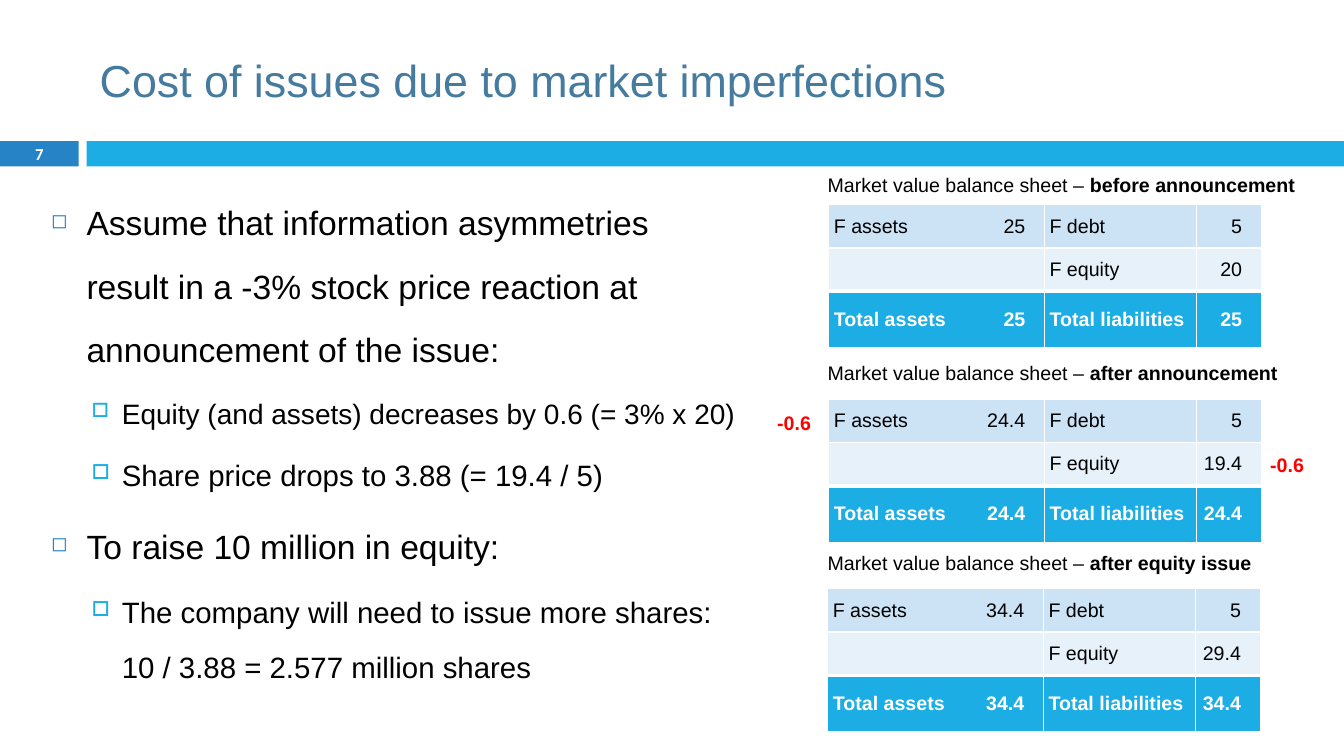
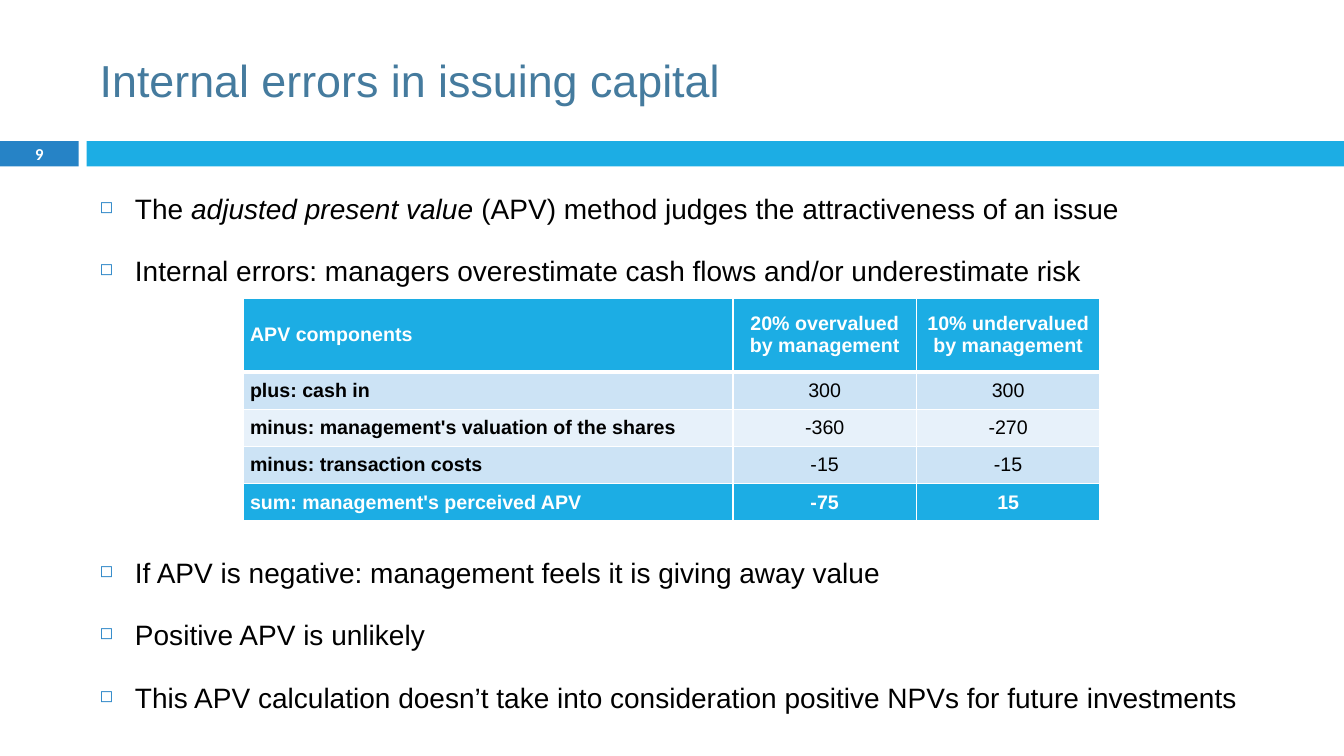
"""Two slides on the cost of issuing capital, with balance sheets and an APV table."""
import pptx
import pptx.dml.color
import pptx.enum.shapes
import pptx.enum.text
import pptx.oxml
import pptx.oxml.ns
import pptx.util

RGB = pptx.dml.color.RGBColor
ALIGN = pptx.enum.text.PP_ALIGN
MIDDLE = pptx.enum.text.MSO_ANCHOR.MIDDLE
TOP = pptx.enum.text.MSO_ANCHOR.TOP
Inches, Pt = pptx.util.Inches, pptx.util.Pt

DEEP_BLUE = RGB(0x26, 0x83, 0xC6)
SKY_BLUE = RGB(0x1C, 0xAD, 0xE4)
TITLE_BLUE = RGB(0x45, 0x7B, 0x9E)
PALE_BLUE = RGB(0xCC, 0xE3, 0xF5)
PALER_BLUE = RGB(0xE7, 0xF1, 0xFA)
BLACK = RGB(0, 0, 0)
WHITE = RGB(0xFF, 0xFF, 0xFF)
RED = RGB(0xFF, 0, 0)

WIDTH, HEIGHT = 13.33, 7.5
BAND_TOP, BAND_HEIGHT = 1.4, 0.25
LINE_SPACING = 1.57
NO_TABLE_STYLE = "{2D5ABB26-0587-4C30-8999-92F81FD0307C}"

LEVELS = [
    dict(indent=0.35, hang=0.35, before=7, bullet="◻", color=DEEP_BLUE, share=60),
    dict(indent=0.7, hang=0.3, before=5.5, bullet="□", color=SKY_BLUE, share=70),
]

ISSUE_COST_POINTS = [
    (0, 24, [("Assume that information asymmetries result in a -3% stock price "
              "reaction at announcement of the issue:", {})]),
    (1, 20, [("Equity (and assets) decreases by 0.6 (= 3% x 20)", {})]),
    (1, 21, [("Share price drops to 3.88 (= 19.4 / 5)", {})]),
    (0, 24, [("To raise 10 million in equity:", {})]),
    (1, 21, [("The company will need to issue more shares: "
              "10 / 3.88 = 2.577 million shares", {})]),
]
BALANCE_SHEETS = [
    ("before announcement", 1.67, 8.22, 2.03, "25", "20"),
    ("after announcement", 3.53, 8.22, 3.96, "24.4", "19.4"),
    ("after equity issue", 5.42, 8.21, 5.84, "34.4", "29.4"),
]
DEBT = "5"
SHEET_COLUMNS = [1.5, 0.5, 0.12, 1.51, 0.5, 0.12]
SHEET_ROWS = [0.43, 0.43, 0.56]
SHEET_FILLS = [PALE_BLUE, PALER_BLUE, SKY_BLUE]
CHANGES = [("-0.6", 7.61, 4.01), ("-0.6", 12.5, 4.42)]

APV_POINTS = [
    (0, 20, [("The ", {}), ("adjusted present value ", {"italic": True}),
             ("(APV) method judges the attractiveness of an issue", {})]),
    (0, 20, [("Internal errors: managers overestimate cash flows "
              "and/or underestimate risk", {})]),
]
APV_CONCLUSIONS = [
    (0, 20, [("If APV is negative: management feels it is giving away value", {})]),
    (0, 20, [("Positive APV is unlikely", {})]),
    (0, 20, [("This APV calculation doesn’t take into consideration positive "
              "NPVs for future investments", {})]),
]
APV_ROWS = [
    ("APV components", "20% overvalued by management", "10% undervalued by management"),
    ("plus: cash in", "300", "300"),
    ("minus: management's valuation of the shares", "-360", "-270"),
    ("minus: transaction costs", "-15", "-15"),
    ("sum: management's perceived APV", "-75", "15"),
]
APV_FILLS = [SKY_BLUE, PALE_BLUE, PALER_BLUE, PALE_BLUE, SKY_BLUE]
APV_COLUMNS = [4.86, 1.82, 1.82]
APV_HEIGHTS = [0.73] + [0.37] * 4


def add_run(paragraph, text, size, color=BLACK, face="Arial", bold=False, italic=False):
    run = paragraph.add_run()
    run.text = text
    font = run.font
    font.size, font.name, font.bold, font.italic = Pt(size), face, bold, italic
    font.color.rgb = color


def add_text_area(slide, left, top, width, height, anchor=TOP):
    frame = slide.shapes.add_textbox(*map(Inches, (left, top, width, height))).text_frame
    frame.word_wrap = True
    frame.vertical_anchor = anchor
    return frame


def add_band(slide, left, width, color):
    band = slide.shapes.add_shape(pptx.enum.shapes.MSO_SHAPE.RECTANGLE,
                                  *map(Inches, (left, BAND_TOP, width, BAND_HEIGHT)))
    band.shadow.inherit = False
    band.fill.solid()
    band.fill.fore_color.rgb = color
    band.line.fill.background()
    return band.text_frame


def add_page(deck, title, number):
    slide = deck.slides.add_slide(deck.slide_layouts[6])
    number_frame = add_band(slide, 0, 0.78, DEEP_BLUE)
    number_frame.margin_top = number_frame.margin_bottom = 0
    number_frame.vertical_anchor = MIDDLE
    number_frame.paragraphs[0].alignment = ALIGN.CENTER
    add_run(number_frame.paragraphs[0], number, 11.9, WHITE, "Calibri", bold=True)
    add_band(slide, 0.86, WIDTH - 0.86, SKY_BLUE)
    heading = add_text_area(slide, 0.89, 0.25, 11.89, 1.08, MIDDLE)
    add_run(heading.paragraphs[0], title, 32, TITLE_BLUE)
    return slide


def set_bullet(paragraph, level):
    props = paragraph._p.get_or_add_pPr()
    props.set("marL", str(Inches(level["indent"])))
    props.set("indent", str(-Inches(level["hang"])))
    ns = pptx.oxml.ns.nsdecls("a")
    for xml in (f'<a:buClr {ns}><a:srgbClr val="{level["color"]}"/></a:buClr>',
                f'<a:buSzPct {ns} val="{level["share"] * 1000}"/>',
                f'<a:buChar {ns} char="{level["bullet"]}"/>'):
        props.append(pptx.oxml.parse_xml(xml))


def add_points(slide, points, *box):
    frame = add_text_area(slide, *box)
    for index, (depth, size, runs) in enumerate(points):
        paragraph = frame.add_paragraph() if index else frame.paragraphs[0]
        level = LEVELS[depth]
        paragraph.level = depth
        paragraph.line_spacing = LINE_SPACING
        paragraph.space_before = Pt(level["before"])
        set_bullet(paragraph, level)
        for text, style in runs:
            add_run(paragraph, text, size, **style)


def add_grid(slide, left, top, columns, heights):
    grid = slide.shapes.add_table(
        len(heights), len(columns),
        *map(Inches, (left, top, sum(columns), sum(heights)))).table
    properties = grid._tbl.tblPr
    properties.find(pptx.oxml.ns.qn("a:tableStyleId")).text = NO_TABLE_STYLE
    grid.first_row = grid.horz_banding = False
    for column, width in zip(grid.columns, columns):
        column.width = Inches(width)
    for row, height in zip(grid.rows, heights):
        row.height = Inches(height)
    return grid


def fill_cell(cell, text, color, fill, borders, inset, align, bold, gap=0):
    for side, points in borders.items():
        cell._tc.get_or_add_tcPr().append(pptx.oxml.parse_xml(
            f'<a:ln{side} {pptx.oxml.ns.nsdecls("a")} w="{Pt(points)}"><a:solidFill>'
            f'<a:srgbClr val="{WHITE}"/></a:solidFill></a:ln{side}>'))
    cell.fill.solid()
    cell.fill.fore_color.rgb = fill
    cell.margin_left = cell.margin_right = Inches(inset)
    cell.margin_top = cell.margin_bottom = 0
    cell.vertical_anchor = MIDDLE
    paragraph = cell.text_frame.paragraphs[0]
    paragraph.alignment = align
    paragraph.space_before = paragraph.space_after = Pt(gap)
    if text:
        add_run(paragraph, text, 14, color, bold=bold)


def add_balance_sheet(slide, stage, caption_top, left, top, total, equity):
    caption = add_text_area(slide, 8.11, caption_top, 4.88, 0.34).paragraphs[0]
    add_run(caption, "Market value balance sheet – ", 14)
    add_run(caption, stage, 14, bold=True)
    rows = [("F assets", total, "", "F debt", DEBT, ""),
            ("", "", "", "F equity", equity, ""),
            ("Total assets", total, "", "Total liabilities", total, "")]
    grid = add_grid(slide, left, top, SHEET_COLUMNS, SHEET_ROWS)
    for r, row in enumerate(rows):
        is_total = r == 2
        for c, text in enumerate(row):
            part = c % 3
            borders = {"L": 1} if part == 0 else {"R": 1} if part == 2 else {}
            borders |= {"T": 3 if is_total else 1, "B": 3 if r == 1 else 1}
            fill_cell(grid.cell(r, c), text, WHITE if is_total else BLACK,
                      SHEET_FILLS[r], borders, 0.05,
                      ALIGN.RIGHT if part == 1 else ALIGN.LEFT, is_total)


def add_apv_table(slide):
    grid = add_grid(slide, 2.41, 2.96, APV_COLUMNS, APV_HEIGHTS)
    for r, row in enumerate(APV_ROWS):
        strong = APV_FILLS[r] == SKY_BLUE
        borders = {"L": 1, "R": 1, "T": 3 if r == 1 else 1, "B": 3 if r == 0 else 1}
        for c, text in enumerate(row):
            fill_cell(grid.cell(r, c), text, WHITE if strong else BLACK, APV_FILLS[r],
                      borders, 0.07, ALIGN.CENTER if c else ALIGN.LEFT,
                      strong or c == 0, gap=4)


def main():
    deck = pptx.Presentation()
    deck.slide_width, deck.slide_height = Inches(WIDTH), Inches(HEIGHT)

    issue_cost = add_page(deck, "Cost of issues due to market imperfections", "7")
    add_points(issue_cost, ISSUE_COST_POINTS, 0.41, 1.73, 7.01, 5.39)
    for sheet in BALANCE_SHEETS:
        add_balance_sheet(issue_cost, *sheet)
    for change, left, top in CHANGES:
        note = add_text_area(issue_cost, left, top, 0.76, 0.37, MIDDLE)
        add_run(note.paragraphs[0], change, 14, RED, bold=True)

    errors = add_page(deck, "Internal errors in issuing capital", "9")
    add_points(errors, APV_POINTS, 0.89, 1.66, 11.99, 1.3)
    add_apv_table(errors)
    add_points(errors, APV_CONCLUSIONS, 0.89, 5.27, 11.99, 1.98)
    deck.save("out.pptx")


if __name__ == "__main__":
    main()
